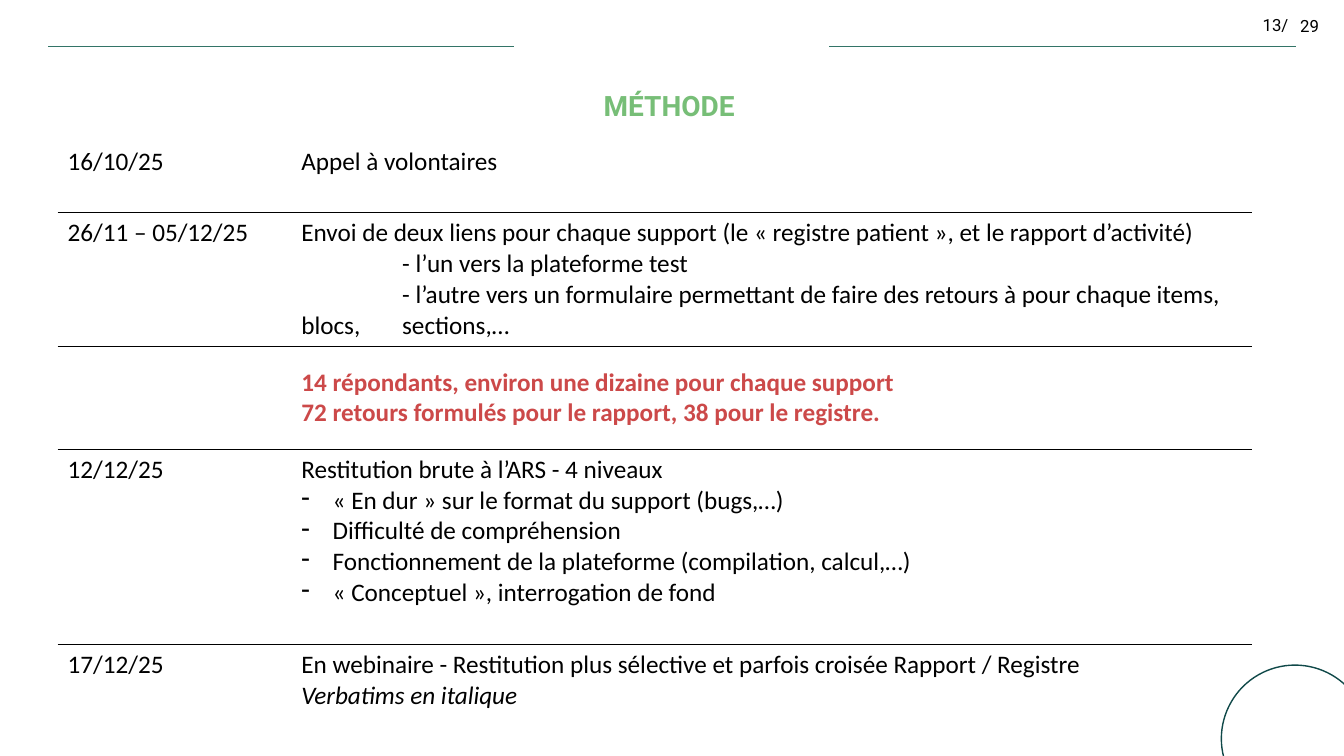
from lxml import etree
from pptx import Presentation
from pptx.dml.color import RGBColor
from pptx.enum.shapes import MSO_CONNECTOR, MSO_SHAPE
from pptx.enum.text import MSO_ANCHOR, MSO_AUTO_SIZE, PP_ALIGN
from pptx.oxml import parse_xml
from pptx.oxml.ns import nsdecls, qn
from pptx.util import Cm, Pt

STRAIGHT = MSO_CONNECTOR.STRAIGHT
ELLIPSE = MSO_SHAPE.OVAL
MIDDLE = MSO_ANCHOR.MIDDLE
NO_AUTOFIT = MSO_AUTO_SIZE.NONE
CENTER = PP_ALIGN.CENTER

COLORS = {"black": "000000", "white": "FFFFFF", "title": "77BE77",
          "result": "CC4949", "rule": "337467", "circle": "104949"}
NO_TABLE_STYLE = "{2D5ABB26-0587-4C30-8999-92F81FD0307C}"
DASH_INDENT = Cm(0.79)
TAB_WIDTH = Cm(2.54)

# Row height in cm, date, lines with their style
STEPS = [
    (1.8, "16/10/25", [("Appel à volontaires", "plain")]),
    (3.38, "26/11 – 05/12/25", [
        ("Envoi de deux liens pour chaque support (le « registre patient », et le rapport d’activité)", "plain"),
        ("- l’un vers la plateforme test", "indented"),
        ("- l’autre vers un formulaire permettant de faire des retours à pour chaque items, blocs, \tsections,…",
         "indented")]),
    (2.58, "", [
        ("14 répondants, environ une dizaine pour chaque support", "result"),
        ("72 retours formulés pour le rapport, 38 pour le registre.", "result")]),
    (4.92, "12/12/25", [
        ("Restitution brute à l’ARS - 4 niveaux", "plain"),
        ("« En dur » sur le format du support (bugs,…)", "dash"),
        ("Difficulté de compréhension", "dash"),
        ("Fonctionnement de la plateforme (compilation, calcul,…)", "dash"),
        ("« Conceptuel », interrogation de fond", "dash")]),
    (2.31, "17/12/25", [
        ("En webinaire - Restitution plus sélective et parfois croisée Rapport / Registre", "plain"),
        ("Verbatims en italique", "italic")]),
]


def color(name):
    return RGBColor.from_string(COLORS[name])


def set_font(paragraph, name, size, color_name, bold=False, italic=False):
    for run in paragraph.runs:
        run.font.name = name
        run.font.size = Pt(size)
        run.font.color.rgb = color(color_name)
        run.font.bold = bold
        run.font.italic = italic


def place(shape, left, top, width, height):
    shape.left, shape.top = Cm(left), Cm(top)
    shape.width, shape.height = Cm(width), Cm(height)


def add_rule(slide, start, end, y):
    rule = slide.shapes.add_connector(STRAIGHT, Cm(start), Cm(y), Cm(end), Cm(y))
    rule.line.color.rgb = color("rule")
    rule.line.width = Pt(1)
    etree.SubElement(rule._element.spPr, qn("a:effectLst"))


def add_corner_circle(slide):
    circle = slide.shapes.add_shape(ELLIPSE, Cm(30.78), Cm(16.76), Cm(3.71), Cm(3.71))
    circle.shadow.inherit = False
    circle.fill.solid()
    circle.fill.fore_color.rgb = color("white")
    white = circle._element.spPr.find(".//" + qn("a:srgbClr"))
    etree.SubElement(white, qn("a:alpha")).set("val", "50000")
    circle.line.color.rgb = color("circle")
    circle.line.width = Pt(1)


def add_page_number(slide):
    current = slide.shapes.add_textbox(Cm(31.57), Cm(0.25), Cm(2.29), Cm(0.71)).text_frame
    current.word_wrap = True
    current.text = "13/"
    set_font(current.paragraphs[0], "Roboto", 12, "black")

    total = slide.placeholders[1]
    place(total, 32.51, 0.33, 1.09, 0.71)
    total.text_frame.auto_size = NO_AUTOFIT
    total.text_frame.text = "29"
    paragraph = total.text_frame.paragraphs[0]
    paragraph.line_spacing = 0.9
    paragraph.space_before = Pt(0)
    properties = paragraph._p.get_or_add_pPr()
    properties.set("marL", "0")
    properties.set("indent", "0")
    etree.SubElement(properties, qn("a:buNone"))
    set_font(paragraph, "Roboto", 12, "black")


def set_title(slide, text):
    title = slide.shapes.title
    place(title, 2.26, 1.83, 29.21, 1.73)
    frame = title.text_frame
    frame.auto_size = NO_AUTOFIT
    frame.vertical_anchor = MIDDLE
    frame.text = text
    frame.paragraphs[0].alignment = CENTER
    frame.paragraphs[0].line_spacing = 0.9
    set_font(frame.paragraphs[0], "Roboto", 20, "title", bold=True)


def format_line(paragraph, style):
    properties = paragraph._p.get_or_add_pPr()
    if style == "dash":
        properties.set("marL", str(DASH_INDENT))
        properties.set("indent", str(-DASH_INDENT))
        etree.SubElement(properties, qn("a:buFontTx"))
        etree.SubElement(properties, qn("a:buChar")).set("char", "-")
    elif style == "indented":
        properties.set("indent", str(TAB_WIDTH))
    is_result = style == "result"
    set_font(paragraph, "Calibri", 18, "result" if is_result else "black",
             bold=is_result, italic=style == "italic")


def fill_cell(cell, lines, underlined):
    cell.fill.background()
    cell.text_frame.text = "\n".join(text for text, _ in lines)
    for paragraph, (_, style) in zip(cell.text_frame.paragraphs, lines):
        format_line(paragraph, style)
    if underlined:
        border = parse_xml(
            f'<a:lnB {nsdecls("a")} w="{Pt(1)}"><a:solidFill>'
            f'<a:srgbClr val="{COLORS["black"]}"/></a:solidFill></a:lnB>')
        cell._tc.get_or_add_tcPr().insert(0, border)


def add_schedule(slide):
    total_height = sum(height for height, _, _ in STEPS)
    table = slide.shapes.add_table(len(STEPS), 2, Cm(1.45), Cm(3.56),
                                   Cm(30.1), Cm(total_height)).table
    table.first_row = False
    table.horz_banding = False
    table._tbl.tblPr.find(qn("a:tableStyleId")).text = NO_TABLE_STYLE
    table.columns[0].width = Cm(5.89)
    table.columns[1].width = Cm(24.21)
    for index, (height, date, lines) in enumerate(STEPS):
        table.rows[index].height = Cm(height)
        underlined = index < len(STEPS) - 1
        fill_cell(table.cell(index, 0), [(date, "plain")], underlined)
        fill_cell(table.cell(index, 1), lines, underlined)
        if lines[0][1] == "result":
            table.cell(index, 1).margin_top = Cm(0.51)


def main():
    presentation = Presentation()
    presentation.slide_width = Cm(33.87)
    presentation.slide_height = Cm(19.05)
    slide = presentation.slides.add_slide(presentation.slide_layouts[1])

    # Page frame
    add_rule(slide, 12.95, 1.22, 1.17)
    add_rule(slide, 32.66, 20.9, 1.17)
    add_corner_circle(slide)
    add_page_number(slide)

    # Content
    set_title(slide, "MÉTHODE")
    add_schedule(slide)

    presentation.save("out.pptx")


if __name__ == "__main__":
    main()
